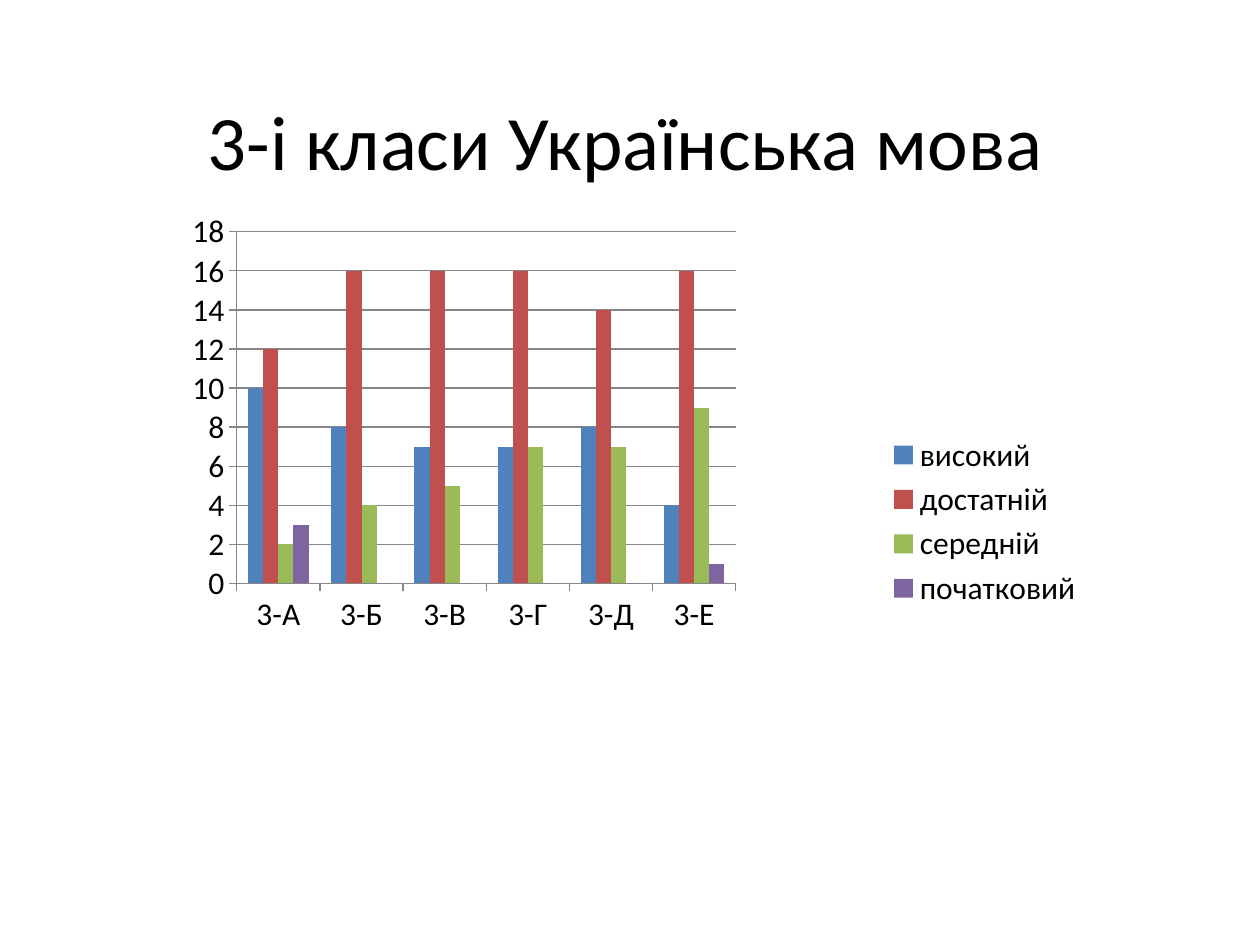
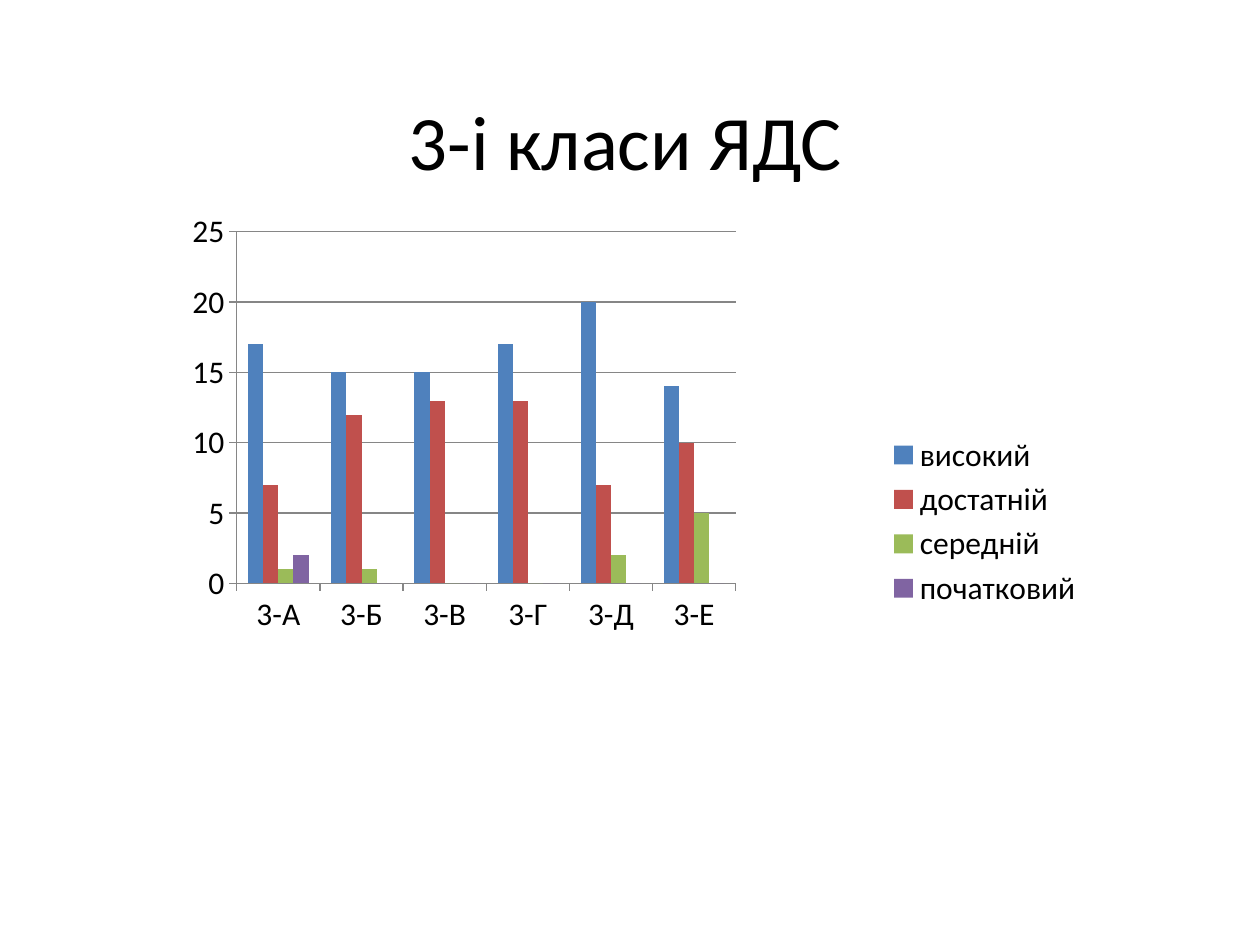
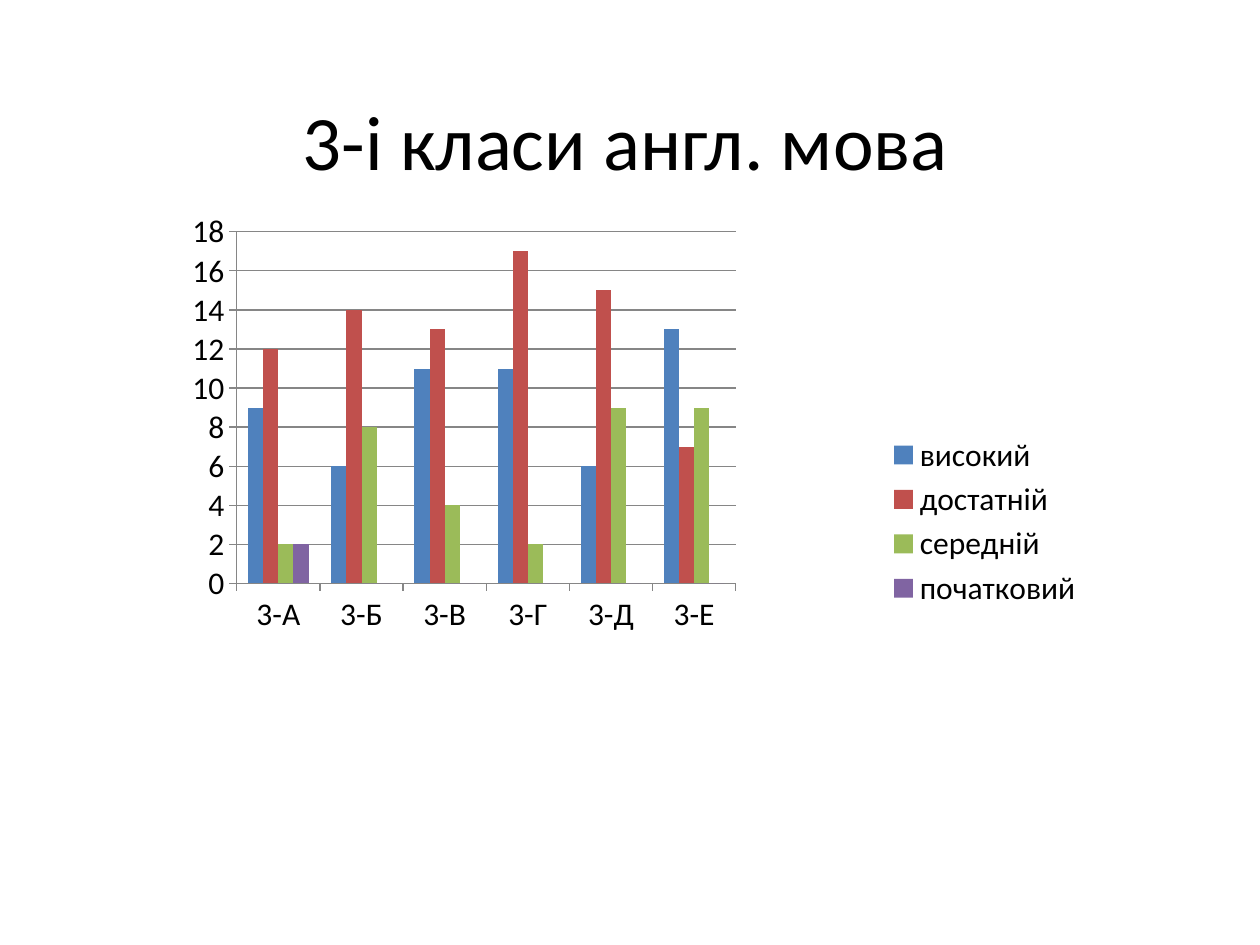
"""Build three slides that chart third-grade results by subject and class."""
import lxml.etree
import pptx
import pptx.chart.data
import pptx.dml.color
import pptx.enum.chart
import pptx.enum.text
import pptx.oxml.ns
import pptx.util

RGBColor = pptx.dml.color.RGBColor
BLACK = RGBColor(0x00, 0x00, 0x00)
GRAY = RGBColor(0x86, 0x86, 0x86)
FONT = "Calibri"

CLASSES = ["3-А", "3-Б", "3-В", "3-Г", "3-Д", "3-Е"]
LEVELS = [
    ("високий", RGBColor(0x4F, 0x81, 0xBD)),
    ("достатній", RGBColor(0xC0, 0x50, 0x4D)),
    ("середній", RGBColor(0x9B, 0xBB, 0x59)),
    ("початковий", RGBColor(0x80, 0x64, 0xA2)),
]
SUBJECTS = [
    ("3-і класи Українська мова", [
        (10, 8, 7, 7, 8, 4),
        (12, 16, 16, 16, 14, 16),
        (2, 4, 5, 7, 7, 9),
        (3, 0, 0, 0, 0, 1),
    ]),
    ("3-і класи ЯДС", [
        (17, 15, 15, 17, 20, 14),
        (7, 12, 13, 13, 7, 10),
        (1, 1, 0, 0, 2, 5),
        (2, 0, 0, 0, 0, 0),
    ]),
    ("3-і класи англ. мова", [
        (9, 6, 11, 11, 6, 13),
        (12, 14, 13, 17, 15, 7),
        (2, 8, 4, 2, 9, 9),
        (2, 0, 0, 0, 0, 0),
    ]),
]

SLIDE_SIZE = (10, 7.5)
TITLE_BOX = (0.75, 0.52, 8.43, 1.18)
CHART_BOX = (1.06, 1.62, 7.64, 5.04)
PLOT_BOX = (0.82, 0.22, 3.96, 2.79)


def inches(lengths):
    return [pptx.util.Inches(length) for length in lengths]


def format_font(font, size):
    font.name = FONT
    font.size = pptx.util.Pt(size)
    font.color.rgb = BLACK


def add_text(slide, text, box, size=44, alignment=pptx.enum.text.PP_ALIGN.CENTER):
    frame = slide.shapes.add_textbox(*inches(box)).text_frame
    frame.word_wrap = True
    frame.vertical_anchor = pptx.enum.text.MSO_ANCHOR.MIDDLE
    paragraph = frame.paragraphs[0]
    paragraph.alignment = alignment
    run = paragraph.add_run()
    run.text = text
    format_font(run.font, size)


def place_plot(chart):
    plot_area = chart.element.xpath("c:chart/c:plotArea")[0]
    for layout in plot_area.xpath("c:layout"):
        plot_area.remove(layout)
    qualified = pptx.oxml.ns.qn
    layout = lxml.etree.Element(qualified("c:layout"))
    manual = lxml.etree.SubElement(layout, qualified("c:manualLayout"))
    shares = [part / whole for part, whole in zip(PLOT_BOX, CHART_BOX[2:] * 2)]
    settings = [("layoutTarget", "inner"), ("xMode", "edge"), ("yMode", "edge")]
    settings += [(key, f"{share:.4f}") for key, share in zip("xywh", shares)]
    for key, value in settings:
        lxml.etree.SubElement(manual, qualified(f"c:{key}")).set("val", value)
    plot_area.insert(0, layout)


def add_level_chart(slide, results):
    data = pptx.chart.data.CategoryChartData()
    data.categories = CLASSES
    for (level, _), counts in zip(LEVELS, results):
        data.add_series(level, counts)
    chart = slide.shapes.add_chart(
        pptx.enum.chart.XL_CHART_TYPE.COLUMN_CLUSTERED, *inches(CHART_BOX), data
    ).chart
    format_font(chart.font, 18)
    chart.has_title = False
    chart.has_legend = True
    chart.legend.position = pptx.enum.chart.XL_LEGEND_POSITION.RIGHT
    chart.legend.include_in_layout = False
    plot = chart.plots[0]
    plot.gap_width = 150
    plot.vary_by_categories = False
    for series, (_, color) in zip(plot.series, LEVELS):
        series.format.fill.solid()
        series.format.fill.fore_color.rgb = color
    chart.value_axis.has_major_gridlines = True
    for axis in (chart.category_axis, chart.value_axis):
        axis.major_tick_mark = pptx.enum.chart.XL_TICK_MARK.OUTSIDE
    for part in (chart.category_axis, chart.value_axis, chart.value_axis.major_gridlines):
        part.format.line.color.rgb = GRAY
        part.format.line.width = pptx.util.Pt(0.75)
    place_plot(chart)


def main():
    presentation = pptx.Presentation()
    presentation.slide_width, presentation.slide_height = inches(SLIDE_SIZE)
    for title, results in SUBJECTS:
        slide = presentation.slides.add_slide(presentation.slide_layouts[6])
        add_text(slide, title, TITLE_BOX)
        add_level_chart(slide, results)
    presentation.save("out.pptx")


if __name__ == "__main__":
    main()
